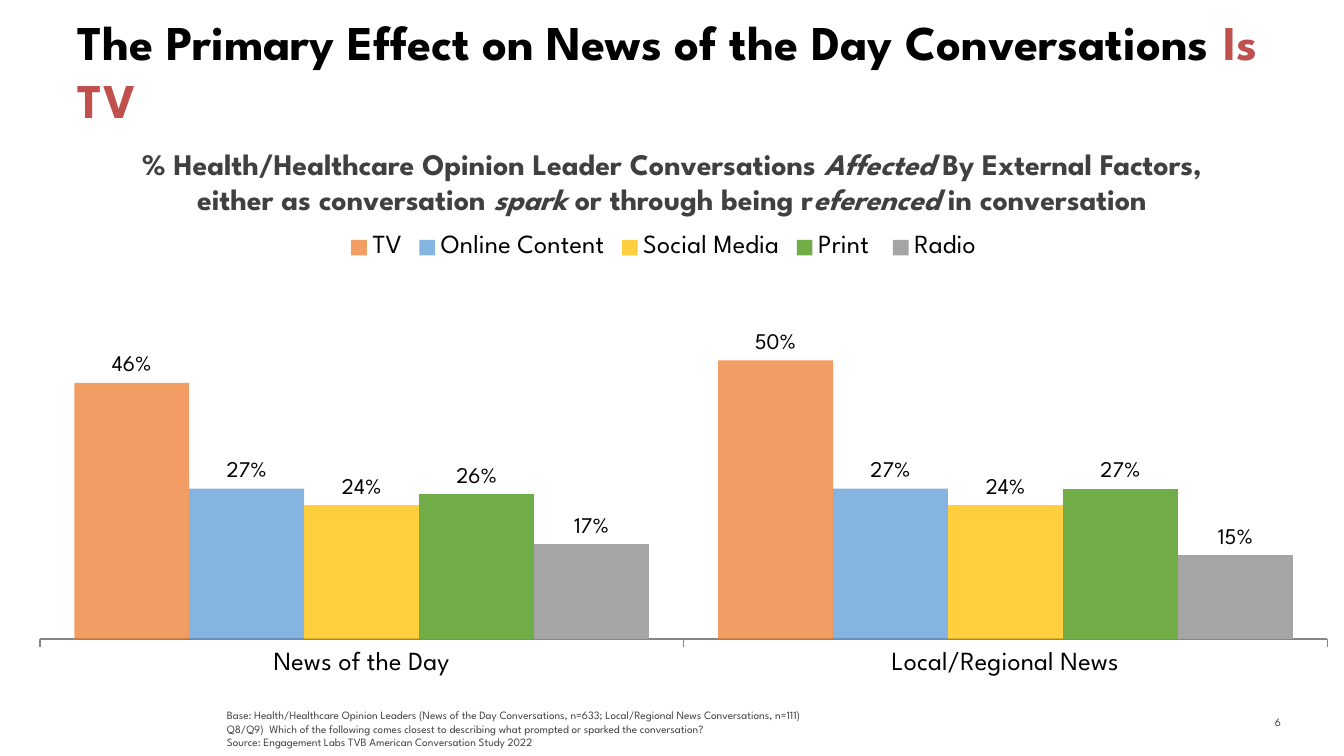
from dataclasses import dataclass

from lxml import etree
from pptx import Presentation
from pptx.chart.data import CategoryChartData
from pptx.dml.color import RGBColor
from pptx.enum.chart import XL_CHART_TYPE, XL_LABEL_POSITION, XL_LEGEND_POSITION, XL_TICK_MARK
from pptx.enum.text import MSO_ANCHOR, MSO_AUTO_SIZE, PP_ALIGN
from pptx.oxml import parse_xml
from pptx.oxml.ns import nsdecls, qn
from pptx.util import Cm, Pt

COLUMNS = XL_CHART_TYPE.COLUMN_CLUSTERED
OUTSIDE_END = XL_LABEL_POSITION.OUTSIDE_END
LEGEND_TOP = XL_LEGEND_POSITION.TOP
TICK_OUT, TICK_NONE = XL_TICK_MARK.OUTSIDE, XL_TICK_MARK.NONE
TOP, MIDDLE, BOTTOM = MSO_ANCHOR.TOP, MSO_ANCHOR.MIDDLE, MSO_ANCHOR.BOTTOM
NO_FIT, GROW = MSO_AUTO_SIZE.NONE, MSO_AUTO_SIZE.SHAPE_TO_FIT_TEXT
LEFT, CENTER, RIGHT = PP_ALIGN.LEFT, PP_ALIGN.CENTER, PP_ALIGN.RIGHT
TITLE_ONLY = 5


@dataclass(frozen=True)
class Theme:
    font: str = "League Spartan"
    ink: str = "000000"
    accent: str = "C0504D"
    muted: str = "404040"
    number: str = "3C3C3A"
    axis: str = "868686"
    title_size: int = 26
    subtitle_size: int = 16
    axis_size: int = 14
    label_size: int = 12
    note_size: int = 6


THEME = Theme()

CATEGORIES = ["News of the Day", "Local/Regional News"]
# Name, values, colour, opacity in percent
SERIES = [
    ("TV", (0.46, 0.50), "ED7D31", 75),
    ("Online Content", (0.27, 0.27), "5B9BD5", 75),
    ("Social Media", (0.24, 0.24), "FFC000", 75),
    ("Print ", (0.26, 0.27), "70AD47", 100),
    ("Radio", (0.17, 0.15), "A5A5A5", 100),
]
# Each line is a list of (text, italic) spans
SUBTITLE = [
    [("% Health/Healthcare Opinion Leader Conversations ", False),
     ("Affected", True), (" By External Factors,", False)],
    [("either as conversation ", False), ("spark", True),
     (" or through being r", False), ("eferenced", True), (" in conversation", False)],
]
NOTES = [
    "Base: Health/Healthcare Opinion Leaders (News of the Day Conversations, n=633; "
    "Local/Regional News Conversations, n=111)",
    "Q8/Q9)  Which of the following comes closest to describing what prompted or sparked "
    "the conversation? \vSource: Engagement Labs TVB American Conversation Study 2022",
]


def style_font(font, size, color, bold=False):
    font.name = THEME.font
    font.size = Pt(size)
    font.bold = bold
    font.color.rgb = RGBColor.from_string(color)


def add_span(para, text, size, color, bold=False, italic=False):
    span = para.add_run()
    span.text = text
    style_font(span.font, size, color, bold)
    span.font.italic = italic


def add_box(page, left, top, width, height, anchor=TOP, fit=NO_FIT, wrap=True):
    box = page.shapes.add_textbox(Cm(left), Cm(top), Cm(width), Cm(height))
    frame = box.text_frame
    frame.word_wrap = wrap
    frame.auto_size = fit
    frame.vertical_anchor = anchor
    return frame


def add_lines(frame, lines, align, size, color, bold=False):
    for index, line in enumerate(lines):
        para = frame.add_paragraph() if index else frame.paragraphs[0]
        para.alignment = align
        for text, italic in line:
            add_span(para, text, size, color, bold, italic)


def add_notes(page):
    frame = add_box(page, 4.04, 13.26, 21.39, 1.02, BOTTOM, GROW)
    frame.text = "\n".join(NOTES)
    for para in frame.paragraphs:
        for span in para.runs:
            style_font(span.font, THEME.note_size, THEME.muted)


def set_title(page):
    title = page.shapes.title
    title.left, title.top, title.width, title.height = Cm(1.22), Cm(0.23), Cm(23.04), Cm(2.39)
    frame = title.text_frame
    frame.word_wrap = True
    frame.auto_size = NO_FIT
    frame.vertical_anchor = TOP
    frame.margin_top = 0
    para = frame.paragraphs[0]
    para.alignment = LEFT
    add_span(para, "The Primary Effect on News of the Day Conversations ",
             THEME.title_size, THEME.ink, bold=True)
    add_span(para, "Is TV", THEME.title_size, THEME.accent, bold=True)


def set_plot_area(chart, left, top, width, height):
    plot_area = chart._chartSpace.chart.plotArea
    for layout in plot_area.findall(qn("c:layout")):
        plot_area.remove(layout)
    layout = parse_xml(f"<c:layout {nsdecls('c')}><c:manualLayout/></c:layout>")
    values = {"layoutTarget": "inner", "xMode": "edge", "yMode": "edge",
              "x": left, "y": top, "w": width, "h": height}
    for name, value in values.items():
        etree.SubElement(layout[0], qn(f"c:{name}")).set("val", str(value))
    plot_area.insert(0, layout)


def style_series(series, color, opacity):
    series.invert_if_negative = False
    fill = series.format.fill
    fill.solid()
    fill.fore_color.rgb = RGBColor.from_string(color)
    if opacity < 100:
        color_node = series._element.xpath("c:spPr//a:srgbClr")[0]
        etree.SubElement(color_node, qn("a:alpha")).set("val", str(opacity * 1000))
    labels = series.data_labels
    labels.show_value = True
    labels.position = OUTSIDE_END
    labels.number_format = "0%"
    labels.number_format_is_linked = False
    style_font(labels.font, THEME.label_size, THEME.ink)


def add_column_chart(page):
    data = CategoryChartData(number_format="0%")
    data.categories = CATEGORIES
    for name, values, *_ in SERIES:
        data.add_series(name, values)
    chart = page.shapes.add_chart(COLUMNS, Cm(0), Cm(4.17), Cm(25.1), Cm(8.99), data).chart
    chart.has_title = False
    style_font(chart.font, 18, THEME.ink)

    # Columns
    plot = chart.plots[0]
    plot.gap_width = 60
    plot.overlap = 0
    plot.vary_by_categories = False
    for series, (_, _, color, opacity) in zip(plot.series, SERIES):
        style_series(series, color, opacity)

    # Axes
    categories = chart.category_axis
    categories.major_tick_mark = TICK_OUT
    categories.minor_tick_mark = TICK_NONE
    categories.format.line.color.rgb = RGBColor.from_string(THEME.axis)
    categories.format.line.width = Pt(0.75)
    style_font(categories.tick_labels.font, THEME.axis_size, THEME.ink)
    values = chart.value_axis
    values.minimum_scale, values.maximum_scale = 0, 0.7
    values.has_major_gridlines = False
    values.visible = False

    # Legend and plot position
    chart.has_legend = True
    chart.legend.position = LEGEND_TOP
    chart.legend.include_in_layout = False
    style_font(chart.legend.font, THEME.axis_size, THEME.ink)
    set_plot_area(chart, 0.03, 0.06, 0.97, 0.82)


def main():
    deck = Presentation()
    deck.slide_width, deck.slide_height = Cm(25.4), Cm(14.29)
    page = deck.slides.add_slide(deck.slide_layouts[TITLE_ONLY])

    # Page number
    number = add_box(page, 22.96, 13.26, 1.5, 0.76, MIDDLE)
    add_lines(number, [[("6", False)]], RIGHT, THEME.note_size, THEME.number)

    # Chart, headings and notes
    add_column_chart(page)
    set_title(page)
    subtitle = add_box(page, 1.22, 2.62, 22.96, 1.63, fit=GROW, wrap=False)
    add_lines(subtitle, SUBTITLE, CENTER, THEME.subtitle_size, THEME.muted, bold=True)
    add_notes(page)
    deck.save("out.pptx")


if __name__ == "__main__":
    main()
